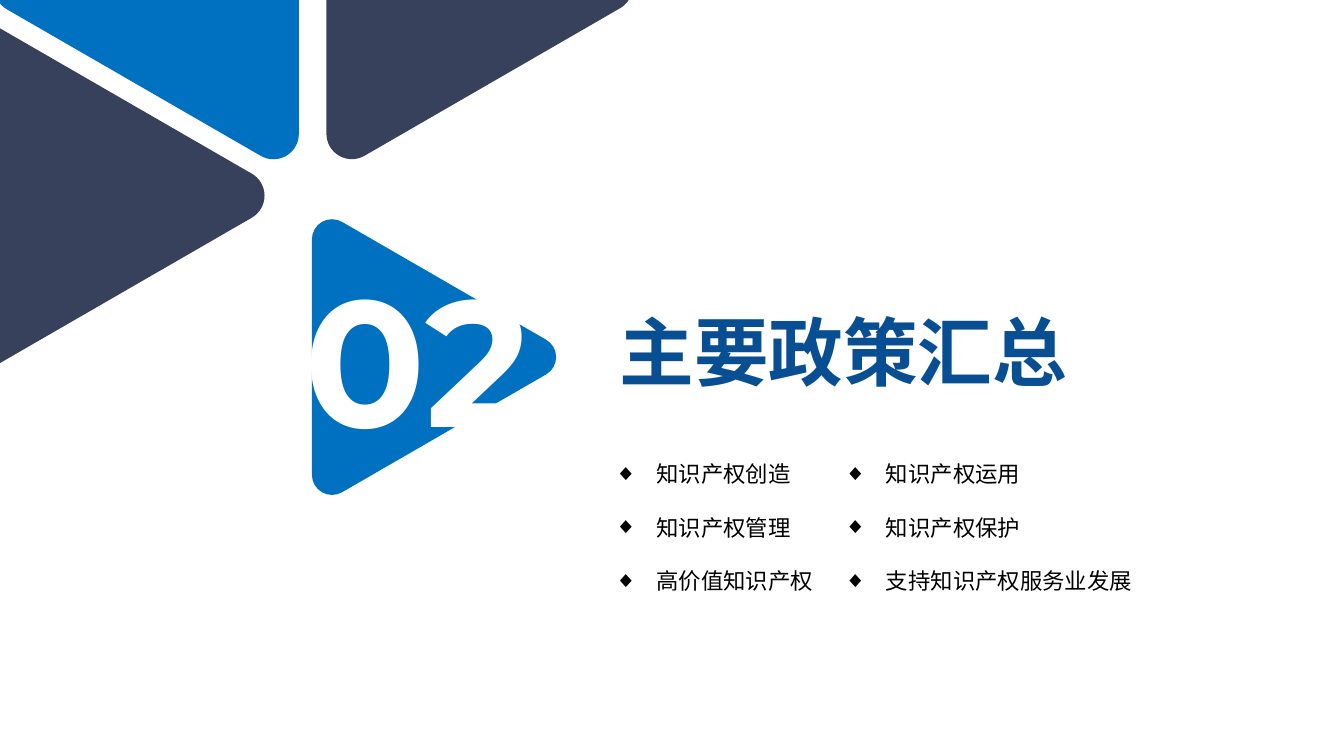
from dataclasses import dataclass
from math import cos, radians, sin, tan

from lxml.etree import SubElement
from pptx import Presentation
from pptx.dml.color import RGBColor as Rgb
from pptx.enum.text import MSO_ANCHOR as Anchor, MSO_AUTO_SIZE as Fit, PP_ALIGN as Align
from pptx.oxml.ns import qn
from pptx.util import Cm, Pt


@dataclass(frozen=True)
class Theme:
    blue: str = "0070C0"
    navy: str = "37415C"
    title: str = "074F92"
    white: str = "FFFFFF"
    black: str = "000000"
    head: float = 40
    num: float = 96
    body: float = 12
    sans: str = "Arial"
    cjk: str = "Noto Sans CJK SC"
    digit: str = "Montserrat"


@dataclass(frozen=True)
class Wedge:
    x: float
    y: float
    reach: float
    round: float
    turn: int
    fill: str


@dataclass(frozen=True)
class Column:
    x: float
    width: float
    items: tuple[str, ...]


THEME = Theme()
BADGE = Wedge(7.56, 6.75, 2.57, 0.38, 0, THEME.blue)
FAN = (
    Wedge(8.26, -0.26, 3.22, 0.48, 0, THEME.navy),
    Wedge(3.57, -0.24, 3.2, 0.48, 180, THEME.blue),
    Wedge(1.32, 3.7, 3.2, 0.48, 0, THEME.navy),
)
COLUMNS = (
    Column(11.36, 6.37, ("知识产权创造", "知识产权管理", "高价值知识产权")),
    Column(15.7, 9, ("知识产权运用", "知识产权保护", "支持知识产权服务业发展")),
)


def place(shape, x: float, y: float, width: float, height: float) -> None:
    """Move and size a shape, in centimetres."""
    shape.left, shape.top = Cm(x), Cm(y)
    shape.width, shape.height = Cm(width), Cm(height)


def write(shape, *lines: str, size: float, face: str, color: str, bold: bool = False,
          wrap: bool = True, inset: bool = True, mid: bool = False,
          gap: float = 1, bullet: str = "") -> None:
    """Fill a shape with formatted paragraphs."""
    frame = shape.text_frame
    frame.text = "\n".join(lines)
    frame.word_wrap, frame.auto_size = wrap, Fit.NONE
    frame.vertical_anchor = Anchor.MIDDLE if mid else Anchor.TOP
    if not inset:
        frame.margin_left = frame.margin_right = frame.margin_top = frame.margin_bottom = 0
    for para in frame.paragraphs:
        para.alignment, para.line_spacing = Align.LEFT, gap
        para.space_before = Pt(0)
        if bullet:
            props = para._p.get_or_add_pPr()
            props.set("marL", str(Cm(0.79)))
            props.set("indent", str(Cm(-0.79)))
            SubElement(props, qn("a:buFont")).set("typeface", THEME.sans)
            SubElement(props, qn("a:buChar")).set("char", bullet)
        for run in para.runs:
            font = run.font
            font.size, font.bold, font.name = Pt(size), bold, face
            font.color.rgb = Rgb.from_string(color)
            SubElement(run._r.get_or_add_rPr(), qn("a:ea")).set("typeface", face)


def trace(wedge: Wedge) -> list[tuple[int, int]]:
    """List seven points a corner: a start, then two cubic arcs of 60 degrees."""
    pull = 4 / 3 * tan(radians(15))
    points = []
    for corner in range(wedge.turn, wedge.turn + 360, 120):
        hub = radians(corner)
        for turn, bend in ((-60, 0), (-60, pull), (0, -pull), (0, 0),
                           (0, pull), (60, -pull), (60, 0)):
            arc = radians(corner + turn)
            points.append((
                Cm(wedge.x + wedge.reach * cos(hub) + wedge.round * (cos(arc) - bend * sin(arc))),
                Cm(wedge.y + wedge.reach * sin(hub) + wedge.round * (sin(arc) + bend * cos(arc))),
            ))
    return points


def draw(shapes, wedge: Wedge) -> None:
    """Draw an equilateral triangle with rounded corners."""
    points = trace(wedge)
    pen = shapes.build_freeform(*points[0])
    pen.add_line_segments(points[1:], close=True)
    shape = pen.convert_to_shape()
    lines = list(shape._element.iter(qn("a:lnTo")))
    for first in (0, 3, 7, 10, 14, 17):
        head, *rest = lines[first:first + 3]
        head.tag = qn("a:cubicBezTo")
        for line in rest:
            head.append(line[0])
            line.getparent().remove(line)
    shape.shadow.inherit = False
    shape.fill.solid()
    shape.fill.fore_color.rgb = Rgb.from_string(wedge.fill)
    shape.line.fill.background()


def main() -> None:
    """Build the section slide and save it."""
    deck = Presentation()
    deck.slide_width, deck.slide_height = Cm(25.4), Cm(14.29)
    slide = deck.slides.add_slide(deck.slide_layouts.get_by_name("Two Content"))
    title, *bodies = slide.placeholders
    place(title, 11.71, 5.18, 9.6, 2.9)
    write(title, "主要政策汇总", size=THEME.head, face=THEME.cjk, color=THEME.title,
          bold=True, wrap=False, inset=False, mid=True)
    draw(slide.shapes, BADGE)
    number = slide.shapes.add_textbox(Cm(5.51), Cm(4.57), Cm(5.03), Cm(4.37))
    write(number, "02", size=THEME.num, face=THEME.digit, color=THEME.white,
          bold=True, wrap=False)
    group = slide.shapes.add_group_shape()
    for wedge in FAN:
        draw(group.shapes, wedge)
    for body, column in zip(bodies, COLUMNS):
        place(body, column.x, 8.06, column.width, 3.33)
        write(body, *column.items, size=THEME.body, face=THEME.sans,
              color=THEME.black, gap=2, bullet="◆")
    deck.save("out.pptx")


if __name__ == "__main__":
    main()
